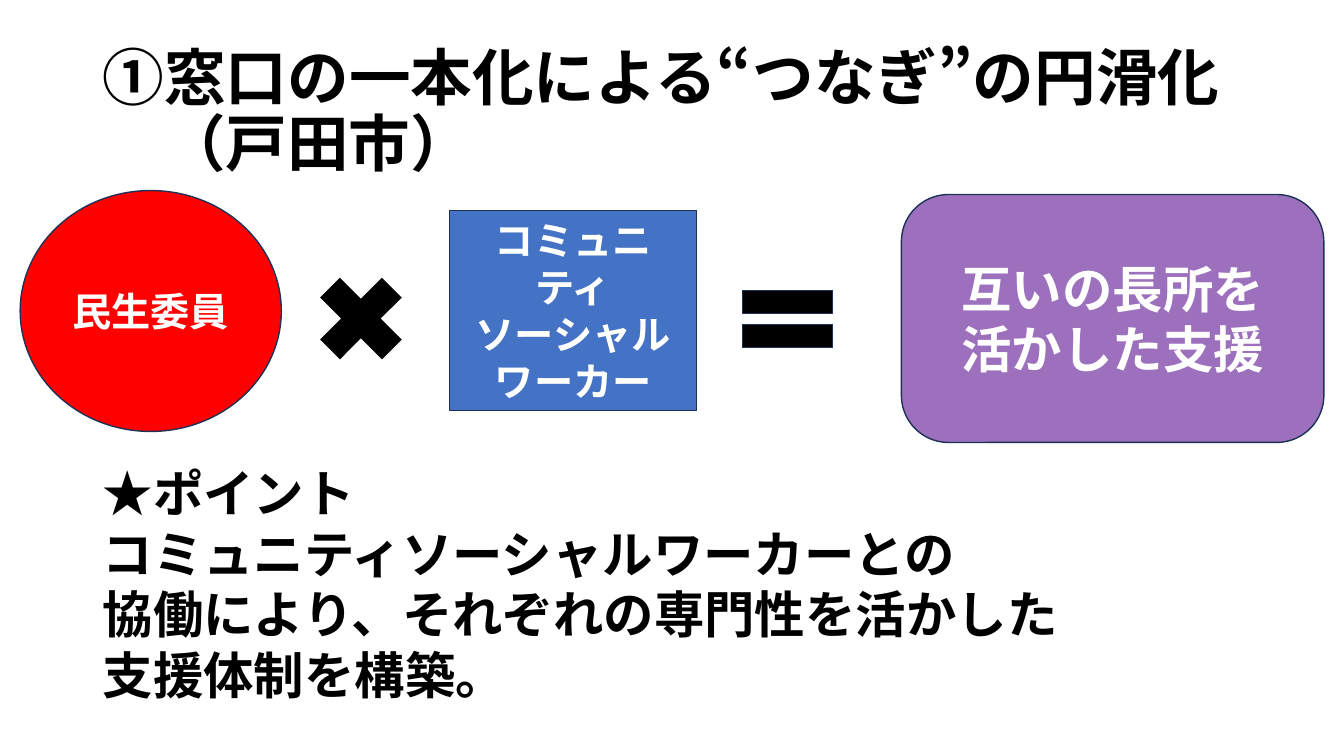
from lxml import etree
from pptx import Presentation
from pptx.dml.color import RGBColor
from pptx.enum.lang import MSO_LANGUAGE_ID
from pptx.enum.shapes import MSO_SHAPE
from pptx.enum.text import MSO_ANCHOR, PP_ALIGN
from pptx.oxml.ns import qn
from pptx.util import Inches, Pt

FONT = "Noto Sans CJK JP"
COLORS = {
    "black": "000000",
    "white": "FFFFFF",
    "red": "FF0000",
    "blue": "4472C4",
    "purple": "7030A0",
    "outline": "1E3256",
}


def write_lines(box, lines, size, color, align, anchor):
    frame = box.text_frame
    frame.word_wrap = True
    frame.vertical_anchor = anchor
    for index, line in enumerate(lines):
        para = frame.paragraphs[0] if index == 0 else frame.add_paragraph()
        para.alignment = align
        span = para.add_run()
        span.text = line
        span.font.size = Pt(size)
        span.font.bold = True
        span.font.name = FONT
        span.font.language_id = MSO_LANGUAGE_ID.JAPANESE
        span.font.color.rgb = RGBColor.from_string(COLORS[color])
        east_asian = etree.SubElement(span.font._element, qn("a:ea"))
        east_asian.set("typeface", FONT)


def add_figure(page, preset, bounds, fill, outlined=True):
    shape = page.shapes.add_shape(preset, *[Inches(value) for value in bounds])
    shape.shadow.inherit = False
    shape.fill.solid()
    shape.fill.fore_color.rgb = RGBColor.from_string(COLORS[fill])
    if outlined:
        shape.line.color.rgb = RGBColor.from_string(COLORS["outline"])
        shape.line.width = Pt(1)
    else:
        shape.line.fill.background()
    return shape


deck = Presentation()
deck.slide_width = Inches(13.33)
deck.slide_height = Inches(7.5)
page = deck.slides.add_slide(deck.slide_layouts[6])

title = page.shapes.add_textbox(Inches(0.92), Inches(0.4), Inches(11.5), Inches(1.45))
title_lines = ["①窓口の一本化による“つなぎ”の円滑化", "（戸田市）"]
write_lines(title, title_lines, 44, "black", PP_ALIGN.LEFT, MSO_ANCHOR.MIDDLE)
for para in title.text_frame.paragraphs:
    para.line_spacing = 0.9
city_properties = title.text_frame.paragraphs[1]._p.get_or_add_pPr()
city_properties.set("marL", str(Inches(0.61)))

points = page.shapes.add_textbox(Inches(0.92), Inches(4.54), Inches(11.36), Inches(3.13))
point_lines = [
    "★ポイント",
    "コミュニティソーシャルワーカーとの",
    "協働により、それぞれの専門性を活かした",
    "支援体制を構築。",
]
write_lines(points, point_lines, 36, "black", PP_ALIGN.LEFT, MSO_ANCHOR.TOP)

volunteer = add_figure(page, MSO_SHAPE.OVAL, (0.2, 1.89, 2.59, 2.39), "red")
add_figure(page, MSO_SHAPE.MATH_MULTIPLY, (2.99, 2.57, 1.18, 1.18), "black", outlined=False)
worker = add_figure(page, MSO_SHAPE.RECTANGLE, (4.46, 2.09, 2.45, 1.98), "blue")
add_figure(page, MSO_SHAPE.MATH_EQUAL, (7.2, 2.68, 1.22, 0.97), "black")
support = add_figure(page, MSO_SHAPE.ROUNDED_RECTANGLE, (8.94, 1.93, 4.19, 2.46), "purple")
support.adjustments[0] = 0.19
support_color = support._element.spPr.find(qn("a:solidFill")).find(qn("a:srgbClr"))
etree.SubElement(support_color, qn("a:alpha")).set("val", "69000")

figure_texts = [
    (volunteer, ["民生委員"], 28),
    (worker, ["コミュニティ", "ソーシャル", "ワーカー"], 28),
    (support, ["互いの長所を", "活かした支援"], 36),
]
for figure, lines, size in figure_texts:
    write_lines(figure, lines, size, "white", PP_ALIGN.CENTER, MSO_ANCHOR.MIDDLE)

deck.save("out.pptx")
